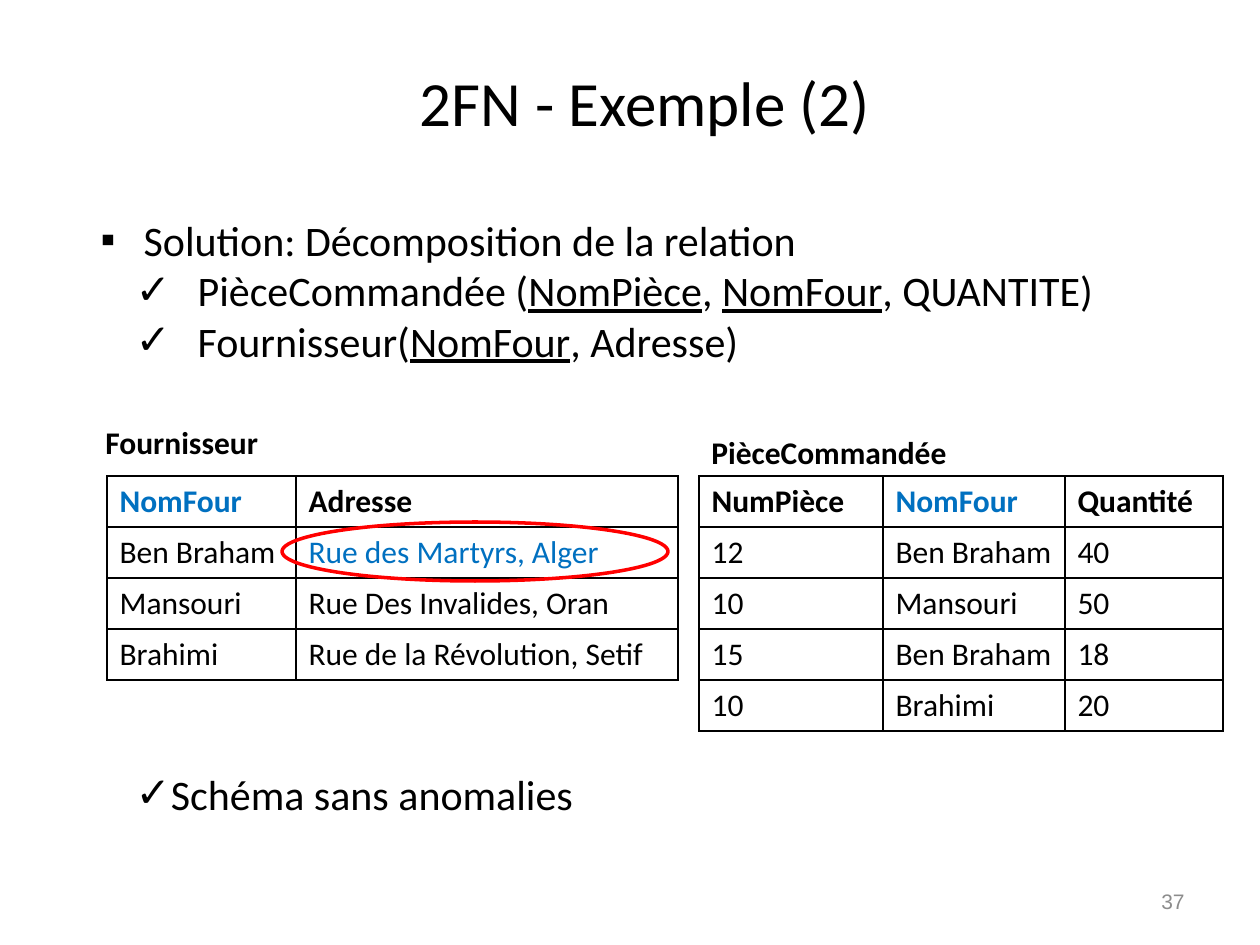
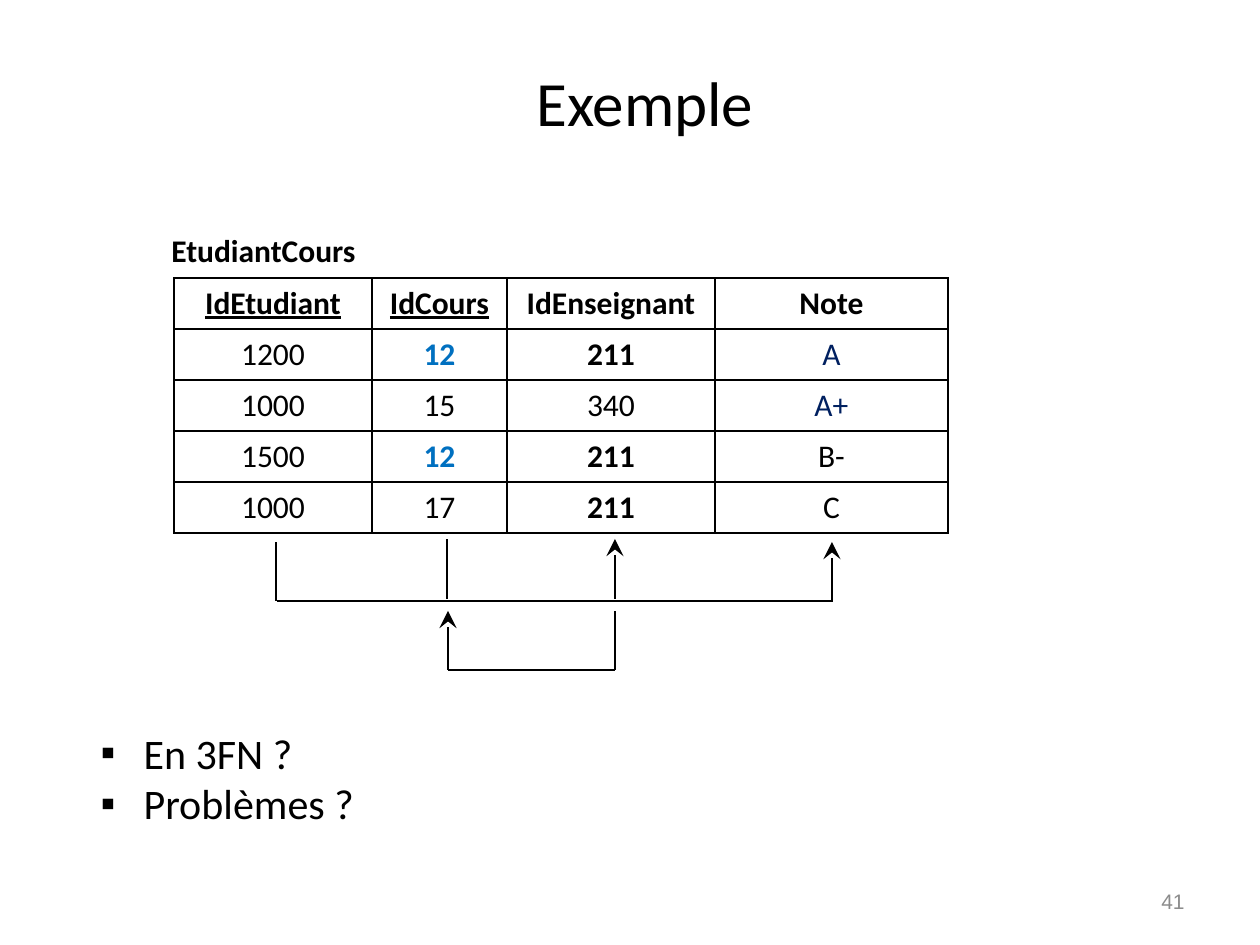
"""Build two slides on normal forms: a 2FN decomposition and a 3FN question."""
from dataclasses import dataclass, field
from typing import NamedTuple

from lxml.etree import SubElement
from pptx import Presentation
from pptx.dml.color import RGBColor
from pptx.enum.shapes import MSO_CONNECTOR, MSO_SHAPE
from pptx.enum.text import MSO_ANCHOR, MSO_AUTO_SIZE, PP_ALIGN
from pptx.oxml.ns import qn
from pptx.util import Emu, Pt

BLACK = RGBColor(0x00, 0x00, 0x00)
GRAY = RGBColor(0x8C, 0x8C, 0x8C)
BLUE = RGBColor(0x00, 0x70, 0xC0)
NAVY = RGBColor(0x00, 0x20, 0x60)
RED = RGBColor(0xFF, 0x00, 0x00)
PX_PER_INCH = 126
ROW_HEIGHT = 51


class Box(NamedTuple):
    left: int
    top: int
    width: int
    height: int


class Bullet(NamedTuple):
    char: str
    level: int
    margin: int
    hang: int


class Style(NamedTuple):
    color: RGBColor = BLACK
    bold: bool = False
    underline: bool = False


class Line(NamedTuple):
    x1: int
    y1: int
    x2: int
    y2: int
    arrow: bool = False


@dataclass
class Item:
    """A list entry whose every second text is underlined."""
    bullet: Bullet
    texts: list[str]
    space_before: int = 0


@dataclass
class Relation:
    """A named table; styles are looked up by cell text."""
    name: str
    label: Box
    left: int
    top: int
    columns: list[int]
    rows: list[list[str]]
    styles: dict[str, Style] = field(default_factory=dict)
    align: PP_ALIGN = PP_ALIGN.LEFT


SQUARE = Bullet("▪", 0, 43, 43)
CHECK = Bullet("✓", 1, 97, 62)
CLOSE_CHECK = Bullet("✓", 1, 67, 32)
TITLE_BOX = Box(74, 37, 1142, 129)
NUMBER_BOX = Box(903, 876, 294, 50)

SUPPLIER = Relation(
    "Fournisseur", Box(93, 417, 179, 50), 107, 476, [189, 382],
    [["NomFour", "Adresse"],
     ["Ben Braham", "Rue des Martyrs, Alger"],
     ["Mansouri", "Rue Des Invalides, Oran"],
     ["Brahimi", "Rue de la Révolution, Setif"]],
    {"NomFour": Style(BLUE), "Rue des Martyrs, Alger": Style(BLUE)})

ORDERED_PART = Relation(
    "PièceCommandée", Box(699, 427, 262, 50), 699, 476, [184, 182, 158],
    [["NumPièce", "NomFour", "Quantité"],
     ["12", "Ben Braham", "40"],
     ["10", "Mansouri", "50"],
     ["15", "Ben Braham", "18"],
     ["10", "Brahimi", "20"]],
    {"NomFour": Style(BLUE)})

STUDENT_COURSE = Relation(
    "EtudiantCours", Box(159, 225, 210, 50), 174, 278, [198, 135, 208, 233],
    [["IdEtudiant", "IdCours", "IdEnseignant", "Note"],
     ["1200", "12", "211", "A"],
     ["1000", "15", "340", "A+"],
     ["1500", "12", "211", "B-"],
     ["1000", "17", "211", "C"]],
    {"IdEtudiant": Style(underline=True), "IdCours": Style(underline=True),
     "12": Style(BLUE, True), "211": Style(bold=True),
     "A": Style(NAVY), "A+": Style(NAVY)},
    PP_ALIGN.CENTER)

DEPENDENCIES = [
    Line(277, 601, 833, 601),
    Line(276, 601, 276, 542),
    Line(447, 599, 447, 539),
    Line(615, 599, 615, 539, True),
    Line(832, 601, 832, 542, True),
    Line(615, 670, 615, 611),
    Line(448, 670, 615, 670),
    Line(448, 670, 448, 611, True),
]


def px(value: int) -> Emu:
    return Emu(round(value * 914400 / PX_PER_INCH))


def emu_box(box: Box) -> list[Emu]:
    return [px(value) for value in box]


def place(shape, box: Box) -> None:
    shape.left, shape.top, shape.width, shape.height = emu_box(box)


def format_run(r, size: int, style: Style = Style(), font: str = "Calibri") -> None:
    r.font.name = font
    r.font.size = Pt(size)
    r.font.bold = style.bold
    r.font.underline = style.underline
    r.font.color.rgb = style.color


def add_text(s, text: str, box: Box, size: int, style: Style, font: str = "Calibri"):
    tf = s.shapes.add_textbox(*emu_box(box)).text_frame
    tf.text = text
    format_run(tf.paragraphs[0].runs[0], size, style, font)
    return tf


def add_slide(prs, title: str, number: str, body: Box, items: list[Item]):
    s = prs.slides.add_slide(prs.slide_layouts[1])
    place(s.shapes.title, TITLE_BOX)
    tf = s.shapes.title.text_frame
    tf.text = title
    tf.vertical_anchor = MSO_ANCHOR.MIDDLE
    p = tf.paragraphs[0]
    p.alignment = PP_ALIGN.CENTER
    format_run(p.runs[0], 36)
    fill_body(s.placeholders[1], body, items)
    tf = add_text(s, number, NUMBER_BOX, 12, Style(GRAY), "Arial")
    tf.word_wrap = True
    tf.vertical_anchor = MSO_ANCHOR.MIDDLE
    tf.paragraphs[0].alignment = PP_ALIGN.RIGHT
    return s


def fill_body(shape, box: Box, items: list[Item]) -> None:
    place(shape, box)
    tf = shape.text_frame
    tf.auto_size = MSO_AUTO_SIZE.NONE
    for i, item in enumerate(items):
        p = tf.add_paragraph() if i else tf.paragraphs[0]
        set_bullet(p, item.bullet)
        p.space_before = Pt(item.space_before)
        for j, text in enumerate(item.texts):
            r = p.add_run()
            r.text = text
            format_run(r, 24, Style(underline=j % 2 == 1))


def set_bullet(p, bullet: Bullet) -> None:
    p.level = bullet.level
    pPr = p._p.get_or_add_pPr()
    pPr.set("marL", str(px(bullet.margin)))
    pPr.set("indent", str(px(-bullet.hang)))
    SubElement(pPr, qn("a:buFont"), typeface="Arial")
    SubElement(pPr, qn("a:buChar"), char=bullet.char)


def set_borders(cell) -> None:
    tcPr = cell._tc.get_or_add_tcPr()
    for side in ("lnL", "lnR", "lnT", "lnB"):
        ln = SubElement(tcPr, qn(f"a:{side}"), w=str(Pt(1)))
        fill = SubElement(ln, qn("a:solidFill"))
        SubElement(fill, qn("a:srgbClr"), val=str(BLACK))


def add_relation(s, rel: Relation) -> None:
    label = add_text(s, rel.name, rel.label, 18, Style(bold=True))
    label.word_wrap = False
    box = Box(rel.left, rel.top, sum(rel.columns), ROW_HEIGHT * len(rel.rows))
    table = s.shapes.add_table(len(rel.rows), len(rel.columns), *emu_box(box)).table
    table.first_row = table.horz_banding = False
    for column, width in zip(table.columns, rel.columns):
        column.width = px(width)
    for i, row in enumerate(rel.rows):
        table.rows[i].height = px(ROW_HEIGHT)
        for j, text in enumerate(row):
            cell = table.cell(i, j)
            set_borders(cell)
            cell.fill.background()
            cell.text_frame.text = text
            p = cell.text_frame.paragraphs[0]
            p.alignment = rel.align
            style = rel.styles.get(text, Style())
            format_run(p.runs[0], 18, Style(style.color, style.bold or i == 0, style.underline))


def add_line(s, line: Line) -> None:
    ends = [px(value) for value in line[:4]]
    connector = s.shapes.add_connector(MSO_CONNECTOR.STRAIGHT, *ends)
    connector.line.color.rgb = BLACK
    connector.line.width = Pt(0.75)
    spPr = connector._element.spPr
    if line.arrow:
        SubElement(spPr.find(qn("a:ln")), qn("a:tailEnd"), type="stealth", w="lg", len="lg")
    SubElement(spPr, qn("a:effectLst"))


def add_ring(s, box: Box) -> None:
    ring = s.shapes.add_shape(MSO_SHAPE.OVAL, *emu_box(box))
    ring.shadow.inherit = False
    ring.fill.background()
    ring.line.color.rgb = RED
    ring.line.width = Pt(2)


def build_decomposition(prs) -> None:
    s = add_slide(prs, "2FN - Exemple (2)", "37", Box(88, 208, 1160, 624), [
        Item(SQUARE, ["Solution: Décomposition de la relation"]),
        Item(CHECK, ["PièceCommandée (", "NomPièce", ", ", "NomFour", ", QUANTITE)"]),
        Item(CHECK, ["Fournisseur(", "NomFour", ", Adresse)"]),
        Item(CLOSE_CHECK, ["Schéma sans anomalies"], 230),
    ])
    add_relation(s, SUPPLIER)
    add_relation(s, ORDERED_PART)
    add_ring(s, Box(282, 522, 386, 59))


def build_question(prs) -> None:
    s = add_slide(prs, "Exemple", "41", Box(88, 721, 879, 115), [
        Item(SQUARE, ["En 3FN ?"]),
        Item(SQUARE, ["Problèmes ?"]),
    ])
    add_relation(s, STUDENT_COURSE)
    for line in DEPENDENCIES:
        add_line(s, line)


def main() -> None:
    prs = Presentation()
    prs.slide_width, prs.slide_height = px(1260), px(945)
    build_decomposition(prs)
    build_question(prs)
    prs.save("out.pptx")


if __name__ == "__main__":
    main()
